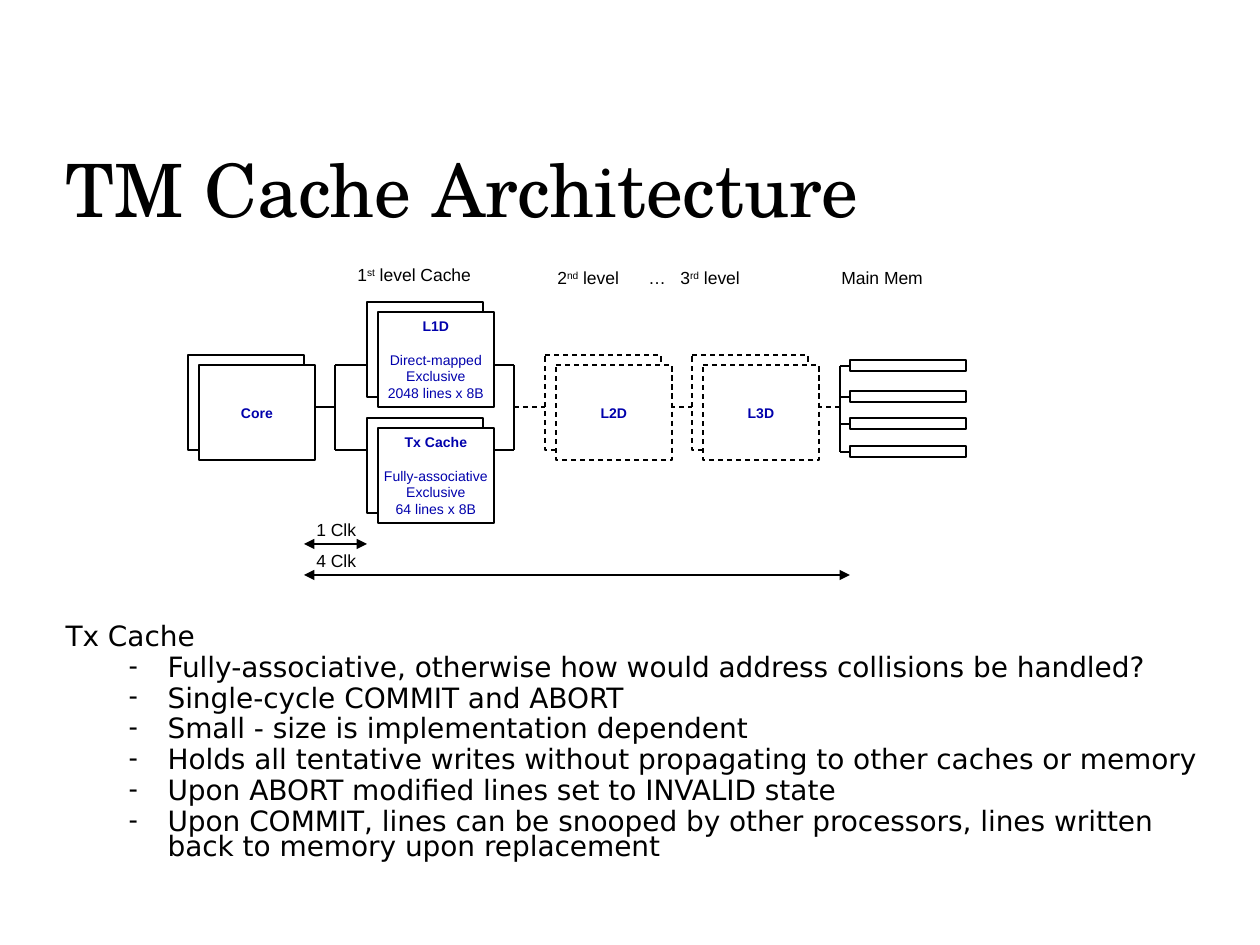
from lxml import etree
from pptx import Presentation
from pptx import util as u
from pptx.dml.color import RGBColor
from pptx.enum import dml, shapes, text
from pptx.oxml.ns import qn

BLACK = RGBColor(0, 0, 0)
WHITE = RGBColor(255, 255, 255)
BLUE = RGBColor(0, 0, 0xAC)
SCALE = 914400 / 126

TITLE = "TM Cache Architecture"
BODY_HEAD = "Tx Cache"
BODY_ITEMS = [
    "Fully-associative, otherwise how would address collisions be handled?",
    "Single-cycle COMMIT and ABORT",
    "Small - size is implementation dependent",
    "Holds all tentative writes without propagating to other caches or memory",
    "Upon ABORT modified lines set to INVALID state",
    "Upon COMMIT, lines can be snooped by other processors, "
    "lines written back to memory upon replacement",
]
LABELS = [
    ("1^st^ level Cache", 345, 258, 155, ()),
    ("2^nd^ level\t…\t3^rd^ level", 545, 261, 284, (91, 123)),
    ("Main Mem", 829, 261, 115, ()),
    ("1 Clk", 304, 513, 71, ()),
    ("4 Clk", 304, 544, 71, ()),
]
UNITS = [
    ("Core", [], 188, 355, False),
    ("L1D", ["Direct-mapped", "Exclusive", "2048 lines x 8B"], 367, 302, False),
    ("Tx Cache", ["Fully-associative", "Exclusive", "64 lines x 8B"], 367, 418, False),
    ("L2D", [], 545, 355, True),
    ("L3D", [], 692, 355, True),
]
UNIT_SIZE = (116, 95)
STACK_SHIFT = (11, 10)
MIDDLE, UPPER, LOWER = 407, 365, 450
CORE_BUS, CACHE_BUS, MEMORY_BUS = 335, 514, 840
SOLID_WIRES = [
    (304, MIDDLE, CORE_BUS, MIDDLE),
    (CORE_BUS, UPPER, CORE_BUS, LOWER),
    (CACHE_BUS, UPPER, CACHE_BUS, LOWER),
] + [
    (left, level, right, level)
    for left, right in ((CORE_BUS, 367), (483, CACHE_BUS))
    for level in (UPPER, LOWER)
]
DASHED_WIRES = [(left, MIDDLE, left + 31, MIDDLE) for left in (CACHE_BUS, 661, 808)]
BANK_LEFT, BANK_TOPS = 850, (360, 391, 418, 446)
TIMINGS = [(304, 544, 367, 544), (304, 575, 850, 575)]


def px(value):
    return u.Emu(round(value * SCALE))


def write(para, content, size, font="Arial", color=BLACK, bold=False,
          align=text.PP_ALIGN.LEFT, before=0, spacing=None):
    para.alignment = align
    para.space_before = u.Pt(before)
    if spacing:
        para.line_spacing = spacing
    for number, part in enumerate(content.split("^")):
        span = para.add_run()
        span.text = part
        span.font.size = u.Pt(size)
        span.font.name = font
        span.font.bold = bold
        span.font.color.rgb = color
        if number % 2:
            span.font._element.set("baseline", "30000")


def place(shape, left, top, width, height):
    shape.left, shape.top = px(left), px(top)
    shape.width, shape.height = px(width), px(height)


def stroke(line, dashed=False):
    line.color.rgb = BLACK
    line.width = u.Pt(0.75)
    if dashed:
        line.dash_style = dml.MSO_LINE.DASH


def add_box(page, left, top, width, height, dashed=False, filled=False):
    box = page.shapes.add_shape(shapes.MSO_SHAPE.FLOWCHART_PROCESS,
                                px(left), px(top), px(width), px(height))
    box.shadow.inherit = False
    if filled:
        box.fill.solid()
        box.fill.fore_color.rgb = WHITE
    else:
        box.fill.background()
    stroke(box.line, dashed)
    return box


def add_wire(page, ends, dashed=False, arrows=False):
    wire = page.shapes.add_connector(shapes.MSO_CONNECTOR.STRAIGHT, *map(px, ends))
    stroke(wire.line, dashed)
    if arrows:
        for tag in ("a:headEnd", "a:tailEnd"):
            etree.SubElement(wire.line._get_or_add_ln(), qn(tag), type="triangle")
    etree.SubElement(wire._element.spPr, qn("a:effectLst"))


def add_unit_front(page, name, details, left, top, dashed):
    box = add_box(page, left + STACK_SHIFT[0], top + STACK_SHIFT[1], *UNIT_SIZE,
                  dashed=dashed, filled=True)
    frame = box.text_frame
    frame.word_wrap = False
    frame.vertical_anchor = text.MSO_ANCHOR.MIDDLE
    look = dict(size=8, color=BLUE, align=text.PP_ALIGN.CENTER)
    write(frame.paragraphs[0], name, bold=True, **look)
    for number, detail in enumerate(details):
        write(frame.add_paragraph(), detail, before=0 if number else 9.5, **look)


def add_label(page, content, left, top, width, stops):
    frame = page.shapes.add_textbox(px(left), px(top), px(width), px(34)).text_frame
    frame.word_wrap = bool(stops)
    para = frame.paragraphs[0]
    if stops:
        tabs = etree.SubElement(para._p.get_or_add_pPr(), qn("a:tabLst"))
        for stop in stops:
            etree.SubElement(tabs, qn("a:tab"), pos=str(px(stop)), algn="l")
    write(para, content, 10)


def indent(para, margin, hanging, bullet=None):
    props = para._p.get_or_add_pPr()
    props.set("marL", str(px(margin)))
    props.set("indent", str(px(-hanging)))
    if bullet:
        etree.SubElement(props, qn("a:buChar"), char=bullet)
    else:
        etree.SubElement(props, qn("a:buNone"))


def fill_placeholders(page):
    title, body = page.placeholders
    place(title, 53, 155, 1218, 77)
    place(body, 53, 620, 1176, 257)
    for holder in (title, body):
        holder.text_frame.word_wrap = True
        holder.text_frame.auto_size = text.MSO_AUTO_SIZE.NONE
    title.text_frame.vertical_anchor = text.MSO_ANCHOR.MIDDLE
    write(title.text_frame.paragraphs[0], TITLE, 42, font="TeX Gyre Schola", spacing=0.9)
    look = dict(size=16, font="DejaVu Sans", spacing=0.75)
    head = body.text_frame.paragraphs[0]
    indent(head, 48, 48)
    write(head, BODY_HEAD, **look)
    for item in BODY_ITEMS:
        para = body.text_frame.add_paragraph()
        para.level = 1
        indent(para, 102, 39, "-")
        write(para, item, before=3.2, **look)


def main():
    deck = Presentation()
    deck.slide_width, deck.slide_height = px(1260), px(945)
    page = deck.slides.add_slide(deck.slide_layouts[1])
    fill_placeholders(page)
    for name, details, left, top, dashed in UNITS:
        add_box(page, left, top, *UNIT_SIZE, dashed=dashed)
    for ends in SOLID_WIRES:
        add_wire(page, ends)
    for ends in DASHED_WIRES:
        add_wire(page, ends, dashed=True)
    add_wire(page, (MEMORY_BUS, BANK_TOPS[0] + 6, MEMORY_BUS, BANK_TOPS[-1] + 6))
    for top in BANK_TOPS:
        add_box(page, BANK_LEFT, top, UNIT_SIZE[0], 11)
        add_wire(page, (MEMORY_BUS, top + 6, BANK_LEFT, top + 6))
    for ends in TIMINGS:
        add_wire(page, ends, arrows=True)
    for label in LABELS:
        add_label(page, *label)
    for unit in UNITS:
        add_unit_front(page, *unit)
    deck.save("out.pptx")


if __name__ == "__main__":
    main()
